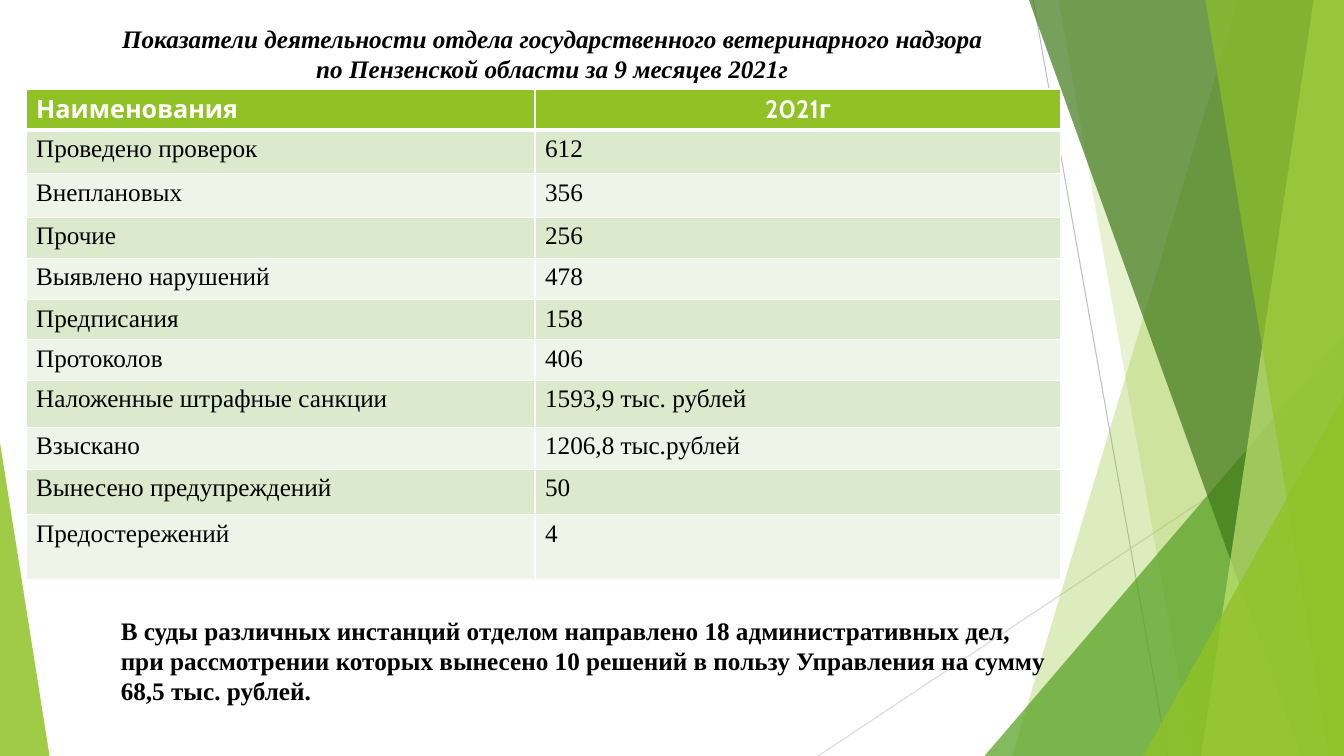
from dataclasses import dataclass

import lxml.etree
import pptx
import pptx.dml.color
import pptx.enum.shapes
import pptx.enum.text
import pptx.oxml.ns
import pptx.util

COLUMNS, ROWS = 160, 90
CELL = pptx.util.Inches(7.5) / ROWS


@dataclass(frozen=True)
class Theme:
    green: str = "90C226"
    leaf: str = "54A021"
    forest: str = "3F7819"
    lime: str = "C0E474"
    odd_row: str = "DBE9CD"
    even_row: str = "EEF4E8"
    white: str = "FFFFFF"
    black: str = "000000"
    line: float = 0.75
    border: float = 1
    header_border: float = 3
    size: int = 18
    header_font: str = "Cabin"
    body_font: str = "Times New Roman"


@dataclass(frozen=True)
class Ray:
    start: tuple[float, float]
    end: tuple[float, float]
    color: str


@dataclass(frozen=True)
class Band:
    top_left: float
    bottom_left: float
    color: str
    opacity: int


@dataclass(frozen=True)
class Wedge:
    left: float
    top: float
    width: float
    apex: float
    color: str
    opacity: int


@dataclass(frozen=True)
class Caption:
    area: tuple[float, float, float, float]
    text: str
    italic: bool
    align: pptx.enum.text.PP_ALIGN


@dataclass(frozen=True)
class Indicator:
    name: str
    value: str
    height: float


THEME = Theme()
LEFT = pptx.enum.text.PP_ALIGN.LEFT
CENTER = pptx.enum.text.PP_ALIGN.CENTER

RAYS = [
    Ray((123, 0), (139, 90), "BFBFBF"),
    Ray((160, 48.4), (97.4, 90), "D9D9D9"),
]
FACETS = [
    Band(147.4, 120.5, THEME.green, 30),
    Band(126, 142, THEME.green, 20),
    Wedge(117.2, 40, 42.8, 1, THEME.leaf, 72),
    Band(122.5, 154.9, THEME.forest, 70),
    Band(156.4, 143, THEME.lime, 70),
    Band(143.5, 158.2, THEME.green, 65),
    Wedge(136.1, 47.2, 23.9, 1, THEME.green, 80),
    Wedge(0, 52.7, 5.9, 0, THEME.green, 85),
]
CAPTIONS = [
    Caption((13.2, 2.2, 105.1, 8.5),
            "Показатели деятельности отдела государственного ветеринарного надзора "
            "по Пензенской области за 9 месяцев 2021г", True, CENTER),
    Caption((13.2, 72.6, 113, 12.1),
            "В суды различных инстанций отделом направлено 18 административных дел, "
            "при рассмотрении которых вынесено 10 решений в пользу Управления на сумму "
            "68,5 тыс. рублей.", False, LEFT),
]
INDICATORS = [
    Indicator("Наименования", "2021г", 4.7),
    Indicator("Проведено проверок", "612", 5.2),
    Indicator("Внеплановых", "356", 5.2),
    Indicator("Прочие", "256", 4.9),
    Indicator("Выявлено нарушений", "478", 4.9),
    Indicator("Предписания", "158", 4.8),
    Indicator("Протоколов", "406", 4.8),
    Indicator("Наложенные штрафные санкции", "1593,9 тыс. рублей", 5.6),
    Indicator("Взыскано", "1206,8 тыс.рублей", 5),
    Indicator("Вынесено предупреждений", "50", 5.4),
    Indicator("Предостережений", "4", 7.7),
]
TABLE_CORNER = (3.1, 10.6)
TABLE_WIDTHS = (60.6, 62.6)


def grid(*units: float) -> list[int]:
    return [round(unit * CELL) for unit in units]


def rgb(color: str) -> pptx.dml.color.RGBColor:
    return pptx.dml.color.RGBColor.from_string(color)


def child(parent, tag: str, **attributes: str):
    return lxml.etree.SubElement(parent, pptx.oxml.ns.qn(tag), **attributes)


def draw_ray(page, ray: Ray) -> None:
    line = page.shapes.add_connector(
        pptx.enum.shapes.MSO_CONNECTOR.STRAIGHT, *grid(*ray.start, *ray.end))
    line.line.color.rgb = rgb(ray.color)
    line.line.width = pptx.util.Pt(THEME.line)
    child(line._element.spPr, "a:effectLst")


def draw_facet(page, facet: Band | Wedge) -> None:
    if isinstance(facet, Band):
        builder = page.shapes.build_freeform(*grid(facet.top_left, 0))
        corners = [(COLUMNS, 0), (COLUMNS, ROWS), (facet.bottom_left, ROWS)]
        builder.add_line_segments([grid(*corner) for corner in corners], close=True)
        shape = builder.convert_to_shape()
    else:
        shape = page.shapes.add_shape(
            pptx.enum.shapes.MSO_SHAPE.ISOSCELES_TRIANGLE,
            *grid(facet.left, facet.top, facet.width, ROWS - facet.top))
        shape.adjustments[0] = facet.apex
    shape.shadow.inherit = False
    shape.line.fill.background()
    shape.fill.solid()
    shape.fill.fore_color.rgb = rgb(facet.color)
    tint = shape._element.spPr.find(".//" + pptx.oxml.ns.qn("a:srgbClr"))
    child(tint, "a:alpha", val=str(facet.opacity * 1000))


def style_paragraph(para, font: str, color: str, bold: bool,
                    italic: bool, align: pptx.enum.text.PP_ALIGN) -> None:
    para.alignment = align
    para.font.name = font
    para.font.size = pptx.util.Pt(THEME.size)
    para.font.color.rgb = rgb(color)
    para.font.bold = bold
    para.font.italic = italic


def draw_caption(page, caption: Caption) -> None:
    box = page.shapes.add_textbox(*grid(*caption.area))
    box.text_frame.word_wrap = True
    para = box.text_frame.paragraphs[0]
    para.text = caption.text
    style_paragraph(para, THEME.body_font, THEME.black, True, caption.italic, caption.align)


def draw_borders(cell, row: int) -> None:
    widths = {"L": THEME.border, "R": THEME.border,
              "T": THEME.header_border if row == 1 else THEME.border,
              "B": THEME.header_border if row == 0 else THEME.border}
    for side, width in widths.items():
        edge = child(cell._tc.get_or_add_tcPr(), f"a:ln{side}", w=str(pptx.util.Pt(width)))
        child(child(edge, "a:solidFill"), "a:srgbClr", val=THEME.white)


def draw_cell(cell, text: str, row: int, column: int) -> None:
    header = row == 0
    para = cell.text_frame.paragraphs[0]
    para.text = text
    style_paragraph(para, THEME.header_font if header else THEME.body_font,
                    THEME.white if header else THEME.black, header, False,
                    CENTER if header and column == 1 else LEFT)
    draw_borders(cell, row)
    cell.fill.solid()
    body_fill = THEME.odd_row if row % 2 else THEME.even_row
    cell.fill.fore_color.rgb = rgb(THEME.green if header else body_fill)


def draw_table(page) -> None:
    height = sum(indicator.height for indicator in INDICATORS)
    table = page.shapes.add_table(len(INDICATORS), len(TABLE_WIDTHS),
                                  *grid(*TABLE_CORNER, sum(TABLE_WIDTHS), height)).table
    for column, width in zip(table.columns, grid(*TABLE_WIDTHS)):
        column.width = width
    for row, indicator in enumerate(INDICATORS):
        table.rows[row].height = grid(indicator.height)[0]
        for column, text in enumerate((indicator.name, indicator.value)):
            draw_cell(table.cell(row, column), text, row, column)


def main() -> None:
    deck = pptx.Presentation()
    deck.slide_width, deck.slide_height = grid(COLUMNS, ROWS)
    page = deck.slides.add_slide(deck.slide_layouts[6])
    for ray in RAYS:
        draw_ray(page, ray)
    for facet in FACETS:
        draw_facet(page, facet)
    draw_table(page)
    for caption in CAPTIONS:
        draw_caption(page, caption)
    deck.save("out.pptx")


if __name__ == "__main__":
    main()
